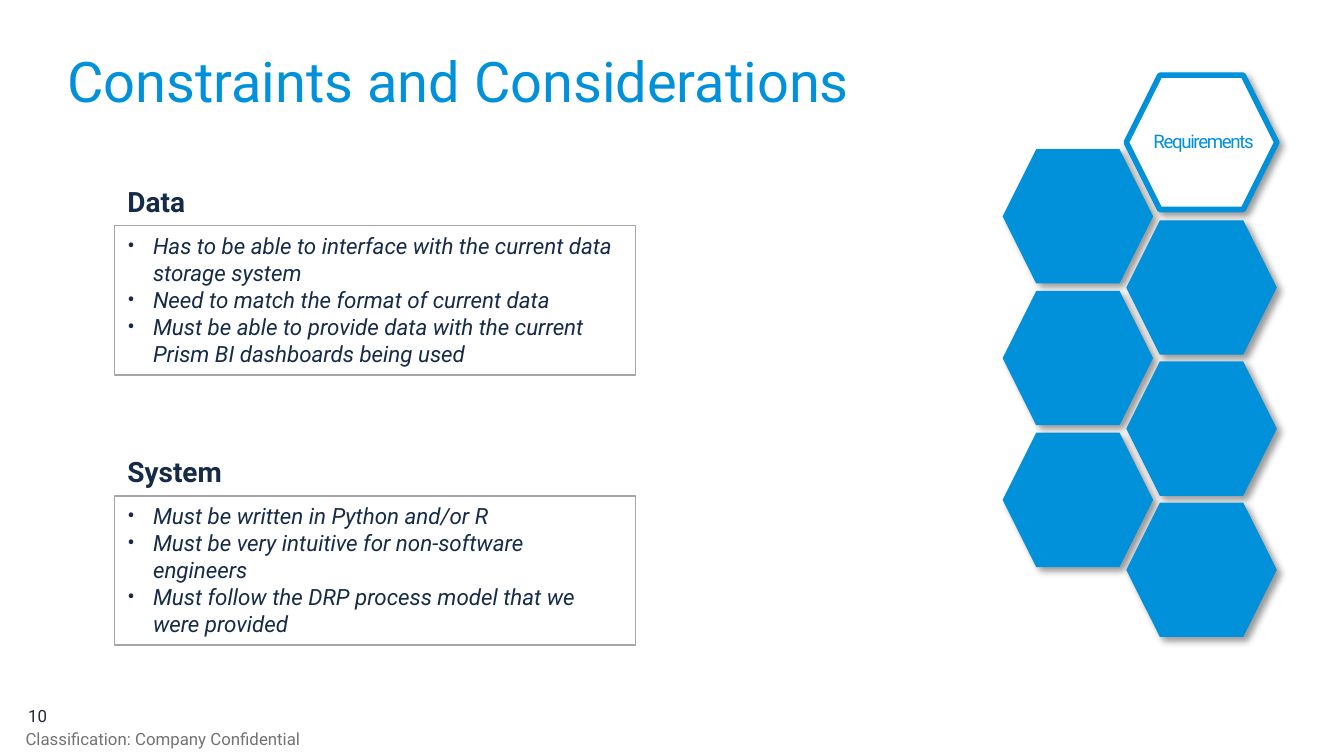
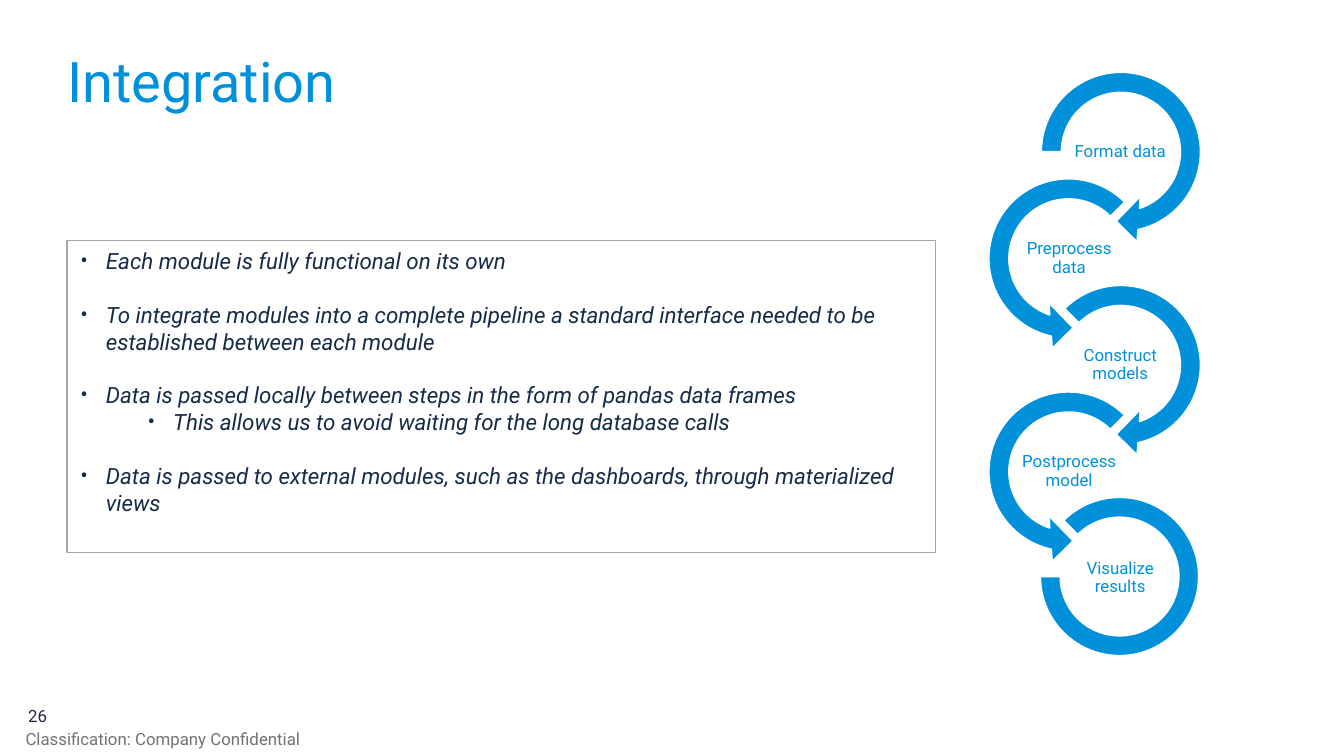
import lxml.etree
import pptx
import pptx.dml.color
import pptx.enum.shapes
import pptx.enum.text
import pptx.oxml.ns
import pptx.util

Inches, Pt = pptx.util.Inches, pptx.util.Pt
SHAPE = pptx.enum.shapes.MSO_SHAPE
ANCHOR = pptx.enum.text.MSO_ANCHOR
CENTER = pptx.enum.text.PP_ALIGN.CENTER
color = pptx.dml.color.RGBColor.from_string
qn = pptx.oxml.ns.qn

BLUE, NAVY, WHITE = "0091DA", "162B48", "FFFFFF"
DARK, GRAY, BORDER = "23273F", "737373", "A6A6A9"
PANEL_INSETS = (0.1, 0.05)


def add_text(page, place, lines, size, ink, insets=(0, 0), anchor=ANCHOR.TOP, spacing=None,
             align=None, bold=None, italic=None, bullets=False, gap=0, border=None):
    """Add a text box; a line is a string, or a (level, string) pair."""
    box = page.shapes.add_textbox(*map(Inches, place))
    if border:
        box.line.color.rgb = color(border)
        box.line.width = Pt(0.75)
    frame = box.text_frame
    frame.word_wrap = True
    frame.vertical_anchor = anchor
    frame.margin_left = frame.margin_right = Inches(insets[0])
    frame.margin_top = frame.margin_bottom = Inches(insets[1])
    for index, line in enumerate(lines):
        level, words = line if isinstance(line, tuple) else (0, line)
        para = frame.add_paragraph() if index else frame.paragraphs[0]
        para.text = words
        para.level = level
        if align is not None:
            para.alignment = align
        if spacing:
            para.line_spacing = spacing
        if gap and index and level == 0:
            para.space_before = Pt(gap)
        if bullets:
            properties = para._p.get_or_add_pPr()
            properties.set("marL", str(Inches(0.19 + 0.5 * level)))
            properties.set("indent", str(Inches(-0.19)))
            lxml.etree.SubElement(properties, qn("a:buFont")).set("typeface", "Roboto")
            lxml.etree.SubElement(properties, qn("a:buChar")).set("char", "•")
        font = para.runs[0].font
        font.name, font.size, font.bold, font.italic = "Roboto", Pt(size), bold, italic
        font.color.rgb = color(ink)
    return box


def add_figure(page, kind, place, fill, line=None, width=1):
    shape = page.shapes.add_shape(kind, *map(Inches, place))
    shape.shadow.inherit = False
    shape.fill.solid()
    shape.fill.fore_color.rgb = color(fill)
    if line:
        shape.line.color.rgb = color(line)
        shape.line.width = Pt(width)
    else:
        shape.line.fill.background()
    return shape


deck = pptx.Presentation()
deck.slide_width = Inches(10)
deck.slide_height = Inches(10 * 9 / 16)

# What the slides share
pages = []
for title, number in [("Constraints and Considerations", "10"), ("Integration", "26")]:
    page = deck.slides.add_slide(deck.slide_layouts[6])
    add_text(page, (0.19, 5.36, 2.23, 0.27), ["Classification: Company Confidential"], 9, GRAY,
             anchor=ANCHOR.MIDDLE)
    add_text(page, (0.5, 0.44, 9, 0.58), [title], 30, BLUE, spacing=0.8)
    add_text(page, (0.21, 5.1, 0.29, 0.3), [number], 9, DARK, anchor=ANCHOR.BOTTOM)
    pages.append(page)
constraints, integration = pages

# Constraints: two columns of hexagons, the top one outlined
hexagons = [(7.46, 1.11 + 1.055 * row, BLUE) for row in range(3)]
hexagons += [(8.38, 1.64 + 1.05 * row, BLUE) for row in range(3)]
hexagons.append((8.38, 0.56, WHITE))
for left, top, fill in hexagons:
    hexagon = add_figure(constraints, SHAPE.HEXAGON, (left, top, 1.12, 1), fill,
                         BLUE if fill == WHITE else None, 3)
    effects = hexagon._element.spPr.find(qn("a:effectLst"))
    shadow = lxml.etree.SubElement(effects, qn("a:outerShdw"), blurRad=str(Pt(4)),
                                   dist=str(Pt(3)), dir="2700000", algn="tl", rotWithShape="0")
    black = lxml.etree.SubElement(shadow, qn("a:srgbClr"), val="000000")
    lxml.etree.SubElement(black, qn("a:alpha"), val="40000")
label = add_text(constraints, (8.38, 0.56, 1.15, 1), ["Requirements"], 10, BLUE, PANEL_INSETS,
                 ANCHOR.MIDDLE, 0.9, CENTER)
label.text_frame.paragraphs[0].runs[0].font._element.set("spc", "-70")

# Constraints: headed panels
panels = [
    ("Data", 1.52, 1.32, [
        "Has to be able to interface with the current data storage system",
        "Need to match the format of current data",
        "Must be able to provide data with the current Prism BI dashboards being used"]),
    ("System", 0.96, 3.33, [
        "Must be written in Python and/or R",
        "Must be very intuitive for non-software engineers",
        "Must follow the DRP process model that we were provided"]),
]
for heading, width, top, lines in panels:
    add_text(constraints, (0.85, top + 0.36, 3.88, 1.11), lines, 12, NAVY, PANEL_INSETS,
             italic=True, bullets=True, border=BORDER)
    header = add_text(constraints, (0.85, top, width, 0.35), [heading], 15, NAVY, PANEL_INSETS,
                      bold=True)
    header.fill.solid()
    header.fill.fore_color.rgb = color(WHITE)

# Integration: chain of circular arrows that ends in an arc
right_turn = (SHAPE.CIRCULAR_ARROW, 7.65, 1.38)
left_turn = (SHAPE.LEFT_CIRCULAR_ARROW, 7.26, 1.38)
last_arc = (SHAPE.BLOCK_ARC, 7.74, 1.18)
steps = [
    ("Format data", right_turn, (0.11, 11.423, 45, 108, 0.125)),
    ("Preprocess data", left_turn, (0.11, 11.423, 63, 189, 0.125)),
    ("Construct models", right_turn, (0.11, 11.423, 45, 135, 0.125)),
    ("Postprocess model", left_turn, (0.11, 11.423, 63, 189, 0.125)),
    ("Visualize results", last_arc, (135, 108, 0.127)),
]
for index, (name, (kind, left, size), adjustments) in enumerate(steps):
    middle = 1.13 + 0.793 * index
    top = 3.7 if kind == SHAPE.BLOCK_ARC else middle - size / 2
    arrow = add_figure(integration, kind, (left, top, size, size), BLUE, WHITE)
    for position, value in enumerate(adjustments):
        arrow.adjustments[position] = value
    label_left = 7.57 if kind == SHAPE.LEFT_CIRCULAR_ARROW else 7.95
    add_text(integration, (label_left, middle - 0.19, 0.77, 0.38), [name], 9, BLUE, (0.01, 0.01),
             ANCHOR.MIDDLE, 0.9, CENTER)

# Integration: explanation
add_text(integration, (0.5, 1.79, 6.46, 2.32), [
    "Each module is fully functional on its own",
    "To integrate modules into a complete pipeline a standard interface needed to be "
    "established between each module",
    "Data is passed locally between steps in the form of pandas data frames",
    (1, "This allows us to avoid waiting for the long database calls"),
    "Data is passed to external modules, such as the dashboards, through materialized views",
], 12, NAVY, PANEL_INSETS, italic=True, bullets=True, gap=14.4, border=BORDER)

deck.save("out.pptx")
